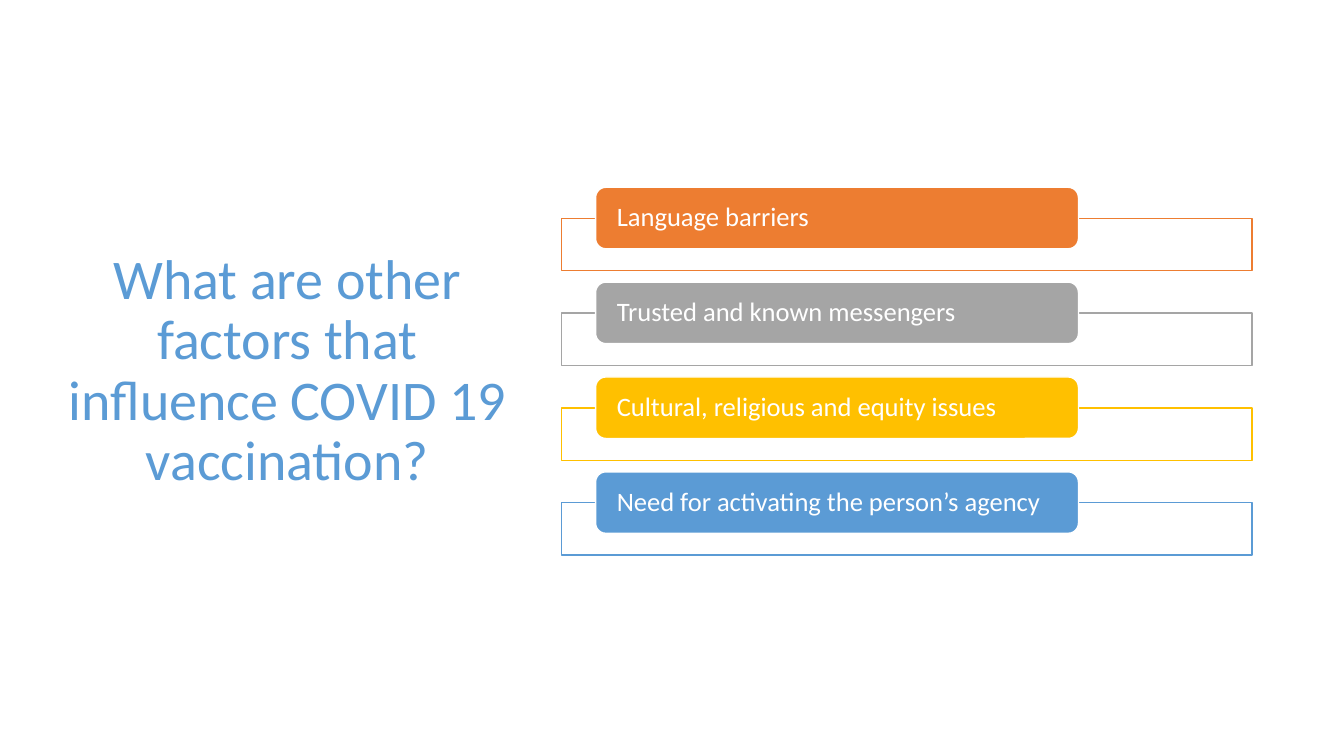
from lxml.etree import SubElement
from pptx import Presentation
from pptx.dml.color import RGBColor
from pptx.enum.shapes import MSO_SHAPE as Shape
from pptx.enum.text import MSO_ANCHOR as Anchor, PP_ALIGN as Align
from pptx.oxml.ns import qn
from pptx.util import Cm, Pt

TITLE = "What are other factors that influence COVID 19 vaccination?"
FACTORS = [
    ("Language barriers", "ED7D31"),
    ("Trusted and known messengers", "A5A5A5"),
    ("Cultural, religious and equity issues", "FFC000"),
    ("Need for activating the person’s agency", "5B9BD5"),
]
TOP, PITCH = 4.72, 2.39  # first label and distance between rows, in cm


def rgb(value):
    return RGBColor.from_string(value)


def write(tf, text, size, color, align):
    tf.word_wrap = True
    tf.vertical_anchor = Anchor.MIDDLE
    tf.text = text
    p = tf.paragraphs[0]
    p.alignment = align
    p.line_spacing = 0.9
    font = p.runs[0].font
    font.name, font.size = "Calibri", Pt(size)
    font.color.rgb = rgb(color)


def add_title(s):
    title = s.shapes.title
    title.left, title.top = Cm(1.45), Cm(1.73)
    title.width, title.height = Cm(11.58), Cm(15.29)
    write(title.text_frame, TITLE, 40, "5B9BD5", Align.CENTER)


def add_box(shapes, kind, left, top, width, height, fill, line):
    sp = shapes.add_shape(kind, Cm(left), Cm(top), Cm(width), Cm(height))
    sp.shadow.inherit = False
    sp.fill.solid()
    sp.fill.fore_color.rgb = rgb(fill)
    sp.line.color.rgb = rgb(line)
    sp.line.width = Pt(1)
    return sp


def set_opacity(sp, percent):
    color = sp.fill._xPr.find(qn("a:solidFill"))[0]
    SubElement(color, qn("a:alpha"), val=str(percent * 1000))


def add_factor(shapes, top, text, color):
    # Outlined frame behind the label
    frame = add_box(shapes, Shape.RECTANGLE, 14.15, top + 0.78, 17.4, 1.32,
                    "FFFFFF", color)
    set_opacity(frame, 90)

    # Filled label
    label = add_box(shapes, Shape.ROUNDED_RECTANGLE, 15.01, top, 12.17, 1.55,
                    color, "FFFFFF")
    tf = label.text_frame
    tf.margin_left = tf.margin_right = Cm(0.46)
    tf.margin_top = tf.margin_bottom = 0
    write(tf, text, 19, "FFFFFF", Align.LEFT)


def main():
    prs = Presentation()
    prs.slide_width, prs.slide_height = Cm(33.87), Cm(19.05)
    s = prs.slides.add_slide(prs.slide_layouts[5])

    add_title(s)

    # List of factors
    group = s.shapes.add_group_shape()
    for i, (text, color) in enumerate(FACTORS):
        add_factor(group.shapes, TOP + i * PITCH, text, color)

    prs.save("out.pptx")


if __name__ == "__main__":
    main()
